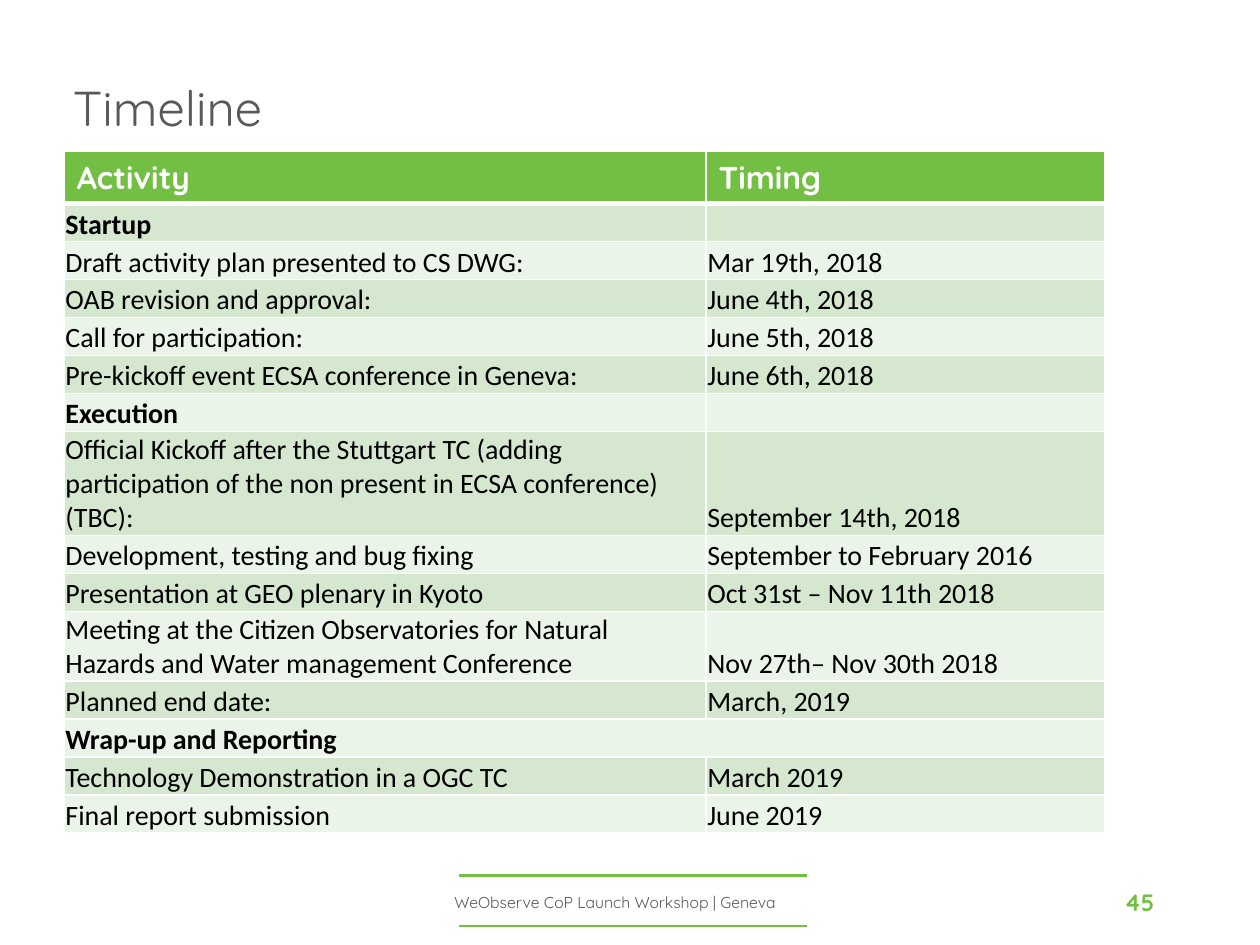
from dataclasses import dataclass

from lxml import etree
from pptx import Presentation
from pptx import util as u
from pptx.dml.color import RGBColor
from pptx.enum import shapes, text
from pptx.oxml import ns

GREEN = RGBColor(0x72, 0xBF, 0x44)
DARK_BAND = RGBColor(0xD5, 0xE8, 0xCF)
LIGHT_BAND = RGBColor(0xEB, 0xF4, 0xE9)
GREY = RGBColor(0x58, 0x59, 0x5B)
WHITE = RGBColor(0xFF, 0xFF, 0xFF)
BLACK = RGBColor(0, 0, 0)


@dataclass(frozen=True)
class TextStyle:
    name: str
    size: float
    color: RGBColor
    bold: bool = False


@dataclass(frozen=True)
class Label:
    words: str
    box: tuple[float, float, float, float]
    style: TextStyle
    paragraph_format: dict


@dataclass(frozen=True)
class Activity:
    name: str
    timing: str = ""
    heading: bool = False
    merged: bool = False


HEADER_STYLE = TextStyle("Quicksand", 18, WHITE, True)
BODY_STYLE = TextStyle("Calibri", 16, BLACK)
HEADING_STYLE = TextStyle("Calibri", 16, BLACK, True)

LABELS = [
    Label("WeObserve CoP Launch Workshop | Geneva", (229.7, 501.1, 243.4, 28.8),
          TextStyle("Quicksand", 9, GREY), {"alignment": text.PP_ALIGN.CENTER}),
    Label("45", (632.2, 496.1, 34.6, 38.2),
          TextStyle("Quicksand", 13.5, GREEN, True), {"alignment": text.PP_ALIGN.RIGHT}),
    Label("Timeline", (34.6, 34.6, 580.3, 56.9),
          TextStyle("Quicksand", 28, GREY), {"line_spacing": 0.9}),
]

ACTIVITIES = [
    Activity("Startup", heading=True),
    Activity("Draft activity plan presented to CS DWG:", "Mar 19th, 2018"),
    Activity("OAB revision and approval:", "June 4th, 2018"),
    Activity("Call for participation:", "June 5th, 2018"),
    Activity("Pre-kickoff event ECSA conference in Geneva:", "June 6th, 2018"),
    Activity("Execution", heading=True),
    Activity("Official Kickoff after the Stuttgart TC (adding participation of the "
             "non present in ECSA conference) (TBC):", "September 14th, 2018"),
    Activity("Development, testing and bug fixing", "September to February 2016"),
    Activity("Presentation at GEO plenary in Kyoto", "Oct 31st – Nov 11th 2018"),
    Activity("Meeting at the Citizen Observatories for Natural\n"
             "Hazards and Water management Conference", "Nov 27th– Nov 30th 2018"),
    Activity("Planned end date:", "March, 2019"),
    Activity("Wrap-up and Reporting", heading=True, merged=True),
    Activity("Technology Demonstration in a OGC TC", "March 2019"),
    Activity("Final report submission", "June 2019"),
]


def set_all(target, values: dict) -> None:
    for name, value in values.items():
        setattr(target, name, value)


def write_paragraph(paragraph, words: str, style: TextStyle) -> None:
    run = paragraph.add_run()
    run.text = words
    set_all(run.font, {"name": style.name, "size": u.Pt(style.size), "bold": style.bold})
    run.font.color.rgb = style.color


def add_label(slide, label: Label) -> None:
    shape = slide.shapes.add_textbox(*map(u.Pt, label.box))
    frame = shape.text_frame
    set_all(frame, {"word_wrap": True, "vertical_anchor": text.MSO_ANCHOR.MIDDLE})
    paragraph = frame.paragraphs[0]
    set_all(paragraph, label.paragraph_format)
    write_paragraph(paragraph, label.words, label.style)


def add_rule(slide, top: float) -> None:
    rule = slide.shapes.add_connector(
        shapes.MSO_CONNECTOR.STRAIGHT, u.Pt(262.3), u.Pt(top), u.Pt(461.2), u.Pt(top))
    rule.line.color.rgb = GREEN
    rule.line.width = u.Pt(1.5)
    etree.SubElement(rule._element.spPr, ns.qn("a:effectLst"))


def set_borders(cell, widths: dict[str, float]) -> None:
    properties = cell._tc.get_or_add_tcPr()
    for index, (side, width) in enumerate(widths.items()):
        line = etree.Element(ns.qn(f"a:ln{side}"), w=str(u.Pt(width)))
        fill = etree.SubElement(line, ns.qn("a:solidFill"))
        etree.SubElement(fill, ns.qn("a:srgbClr"), val=str(WHITE))
        properties.insert(index, line)


def fill_cell(cell, words: str, style: TextStyle, fill: RGBColor,
              cell_format: dict, borders: dict[str, float]) -> None:
    set_all(cell, cell_format)
    cell.fill.solid()
    cell.fill.fore_color.rgb = fill
    set_borders(cell, borders)
    frame = cell.text_frame
    for index, line in enumerate(words.split("\n")):
        paragraph = frame.add_paragraph() if index else frame.paragraphs[0]
        write_paragraph(paragraph, line, style)


def add_timeline(slide) -> None:
    frame = slide.shapes.add_table(
        len(ACTIVITIES) + 1, 2, u.Pt(36.7), u.Pt(86.6), u.Pt(594.4), u.Pt(387.4))
    table = frame.table
    for column, width in zip(table.columns, (366.8, 227.6)):
        column.width = u.Pt(width)
    for row in table.rows:
        row.height = u.Pt(21.7)

    for column, words in enumerate(("Activity", "Timing")):
        fill_cell(table.cell(0, column), words, HEADER_STYLE, GREEN, {},
                  {"L": 1, "R": 1, "T": 1, "B": 3})

    body_format = {
        "vertical_anchor": text.MSO_ANCHOR.BOTTOM,
        "margin_left": u.Pt(0.72), "margin_right": u.Pt(0.72),
        "margin_top": u.Pt(0.72), "margin_bottom": u.Pt(0),
    }
    for index, activity in enumerate(ACTIVITIES, start=1):
        style = HEADING_STYLE if activity.heading else BODY_STYLE
        fill = DARK_BAND if index % 2 else LIGHT_BAND
        borders = {"L": 1, "R": 1, "T": 3 if index == 1 else 1, "B": 1}
        if activity.merged:
            table.cell(index, 0).merge(table.cell(index, 1))
        columns = (activity.name,) if activity.merged else (activity.name, activity.timing)
        for column, words in enumerate(columns):
            fill_cell(table.cell(index, column), words, style, fill, body_format, borders)


def main() -> None:
    presentation = Presentation()
    set_all(presentation, {"slide_width": u.Pt(720), "slide_height": u.Pt(540)})
    slide = presentation.slides.add_slide(presentation.slide_layouts[6])
    for top in (529.2, 500.4):
        add_rule(slide, top)
    add_timeline(slide)
    for label in LABELS:
        add_label(slide, label)
    presentation.save("out.pptx")


if __name__ == "__main__":
    main()
